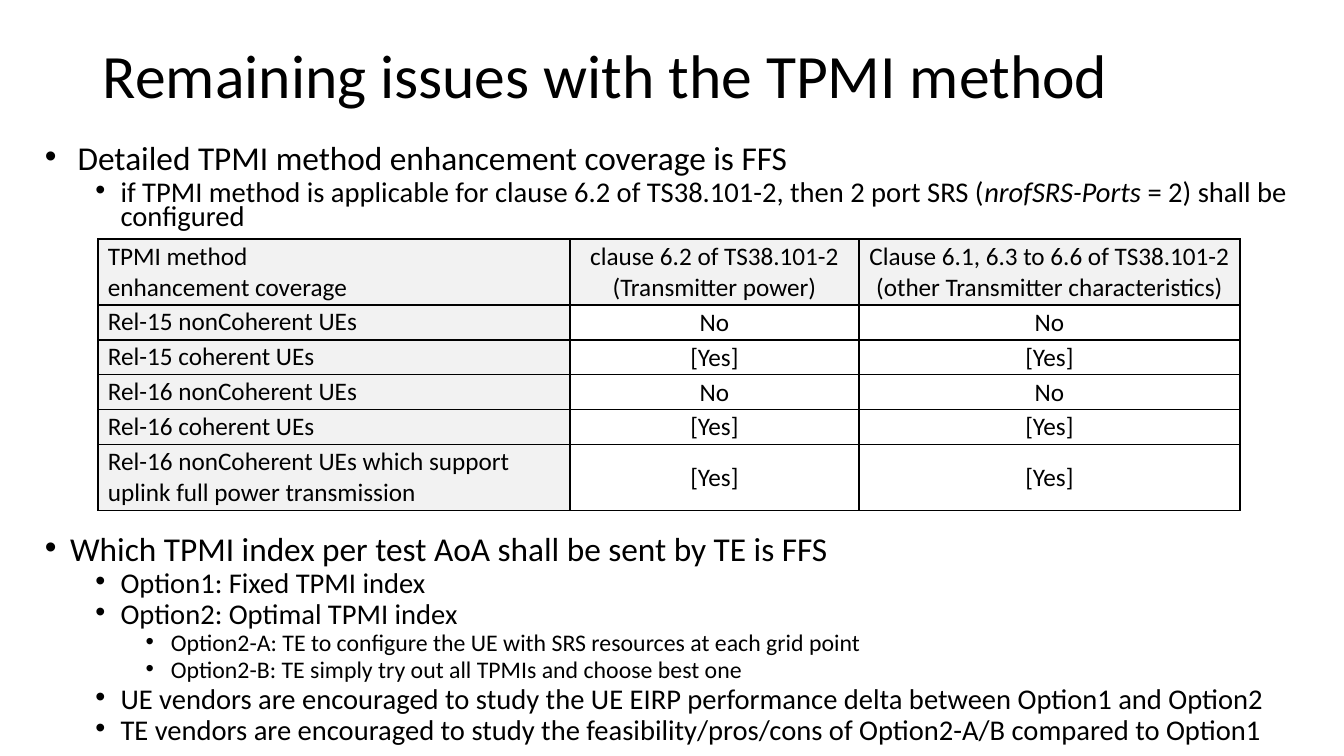
from lxml import etree
from pptx import Presentation
from pptx import util as u
from pptx.dml.color import RGBColor
from pptx.enum import text
from pptx.oxml import ns

SCALE = 914400 / 100.8
LEVELS = [(23.8, 10), (20.4, 5), (17, 5)]  # size, space before


def px(n):
    return u.Emu(round(n * SCALE))


def color(code):
    return RGBColor.from_string(code)


def put(para, words, size=18, ink="000000", font="Calibri", italic=False):
    """Add formatted text to a paragraph, with a line break at each newline."""
    for i, line in enumerate(words.split("\n")):
        if i:
            para.add_line_break()
        run = para.add_run()
        run.text = line
        run.font.size = u.Pt(size)
        run.font.name = font
        run.font.italic = italic
        run.font.color.rgb = color(ink)


class Deck:
    edge = "000000"
    shade = "F2F2F2"
    plain = "FFFFFF"

    def __init__(self, wide, high):
        self.prs = Presentation()
        self.prs.slide_width, self.prs.slide_height = px(wide), px(high)
        self.slide = self.prs.slides.add_slide(self.prs.slide_layouts[6])

    def box(self, *area):
        frame = self.slide.shapes.add_textbox(*map(px, area)).text_frame
        frame.word_wrap = True
        return frame

    def title(self, words, *area):
        para = self.box(*area).paragraphs[0]
        para.line_spacing = 0.9
        put(para, words, size=44)

    def bullets(self, items, *area):
        """Each item is a level and its text; every second part between * is italic."""
        frame = self.box(*area)
        for i, (level, words) in enumerate(items):
            para = frame.add_paragraph() if i else frame.paragraphs[0]
            size, gap = LEVELS[level]
            para.level = level
            para.line_spacing = 0.7
            para.space_before = u.Pt(gap)
            props = para._p.get_or_add_pPr()
            props.set("marL", str(u.Inches(0.25 + 0.5 * level)))
            props.set("indent", str(u.Inches(-0.25)))
            etree.SubElement(props, ns.qn("a:buFont")).set("typeface", "Arial")
            etree.SubElement(props, ns.qn("a:buChar")).set("char", "•")
            for j, part in enumerate(words.split("*")):
                put(para, part, size=size, italic=j % 2 == 1)

    def border(self, cell):
        props = cell._tc.get_or_add_tcPr()
        for side in ("lnL", "lnR", "lnT", "lnB"):
            line = etree.SubElement(props, ns.qn("a:" + side), w=str(u.Pt(1)))
            fill = etree.SubElement(line, ns.qn("a:solidFill"))
            etree.SubElement(fill, ns.qn("a:srgbClr")).set("val", self.edge)

    def table(self, rows, left, top, cols, highs):
        grid = self.slide.shapes.add_table(
            len(rows), len(cols), px(left), px(top), px(sum(cols)), px(sum(highs))).table
        grid.first_row = grid.horz_banding = False
        for col, wide in zip(grid.columns, cols):
            col.width = px(wide)
        for r, (row, high) in enumerate(zip(rows, highs)):
            grid.rows[r].height = px(high)
            for c, words in enumerate(row):
                cell = grid.cell(r, c)
                self.border(cell)
                cell.fill.solid()
                cell.fill.fore_color.rgb = color(self.plain if r and c else self.shade)
                cell.margin_left = cell.margin_right = px(10)
                cell.margin_top = cell.margin_bottom = px(2)
                top_left = r and not c
                cell.vertical_anchor = (text.MSO_ANCHOR.TOP if top_left
                                        else text.MSO_ANCHOR.MIDDLE)
                para = cell.text_frame.paragraphs[0]
                para.alignment = text.PP_ALIGN.CENTER if c else text.PP_ALIGN.LEFT
                put(para, words)


def main():
    deck = Deck(1344, 756)
    deck.title("Remaining issues with the TPMI method", 93, 40, 1159, 146)

    # Coverage: bullets above the table
    deck.bullets([
        (0, " Detailed TPMI method enhancement coverage is FFS"),
        (1, "if TPMI method is applicable for clause 6.2 of TS38.101-2, then 2 port SRS "
            "(*nrofSRS-Ports* = 2) shall be configured"),
    ], 35, 143, 1274, 94)

    # Coverage table: both clauses give the same answer
    cover = [
        ("Rel-15 nonCoherent UEs", "No"),
        ("Rel-15 coherent UEs", "[Yes]"),
        ("Rel-16 nonCoherent UEs", "No"),
        ("Rel-16 coherent UEs", "[Yes]"),
        ("Rel-16 nonCoherent UEs which support uplink full power transmission", "[Yes]"),
    ]
    head = ("TPMI method\nenhancement coverage",
            "clause 6.2 of TS38.101-2\n(Transmitter power)",
            "Clause 6.1, 6.3 to 6.6 of TS38.101-2\n(other Transmitter characteristics)")
    rows = [head] + [(name, reply, reply) for name, reply in cover]
    deck.table(rows, 98, 239, [472, 289, 381], [66, 35, 35, 35, 35, 66])

    # Index choice: bullets below the table
    deck.bullets([
        (0, "Which TPMI index per test AoA shall be sent by TE is FFS"),
        (1, "Option1: Fixed TPMI index"),
        (1, "Option2: Optimal TPMI index"),
        (2, "Option2-A: TE to configure the UE with SRS resources at each grid point"),
        (2, "Option2-B: TE simply try out all TPMIs and choose best one"),
        (1, "UE vendors are encouraged to study the UE EIRP performance delta "
            "between Option1 and Option2"),
        (1, "TE vendors are encouraged to study the feasibility/pros/cons of "
            "Option2-A/B compared to Option1"),
    ], 35, 534, 1274, 220)

    deck.prs.save("out.pptx")


if __name__ == "__main__":
    main()
